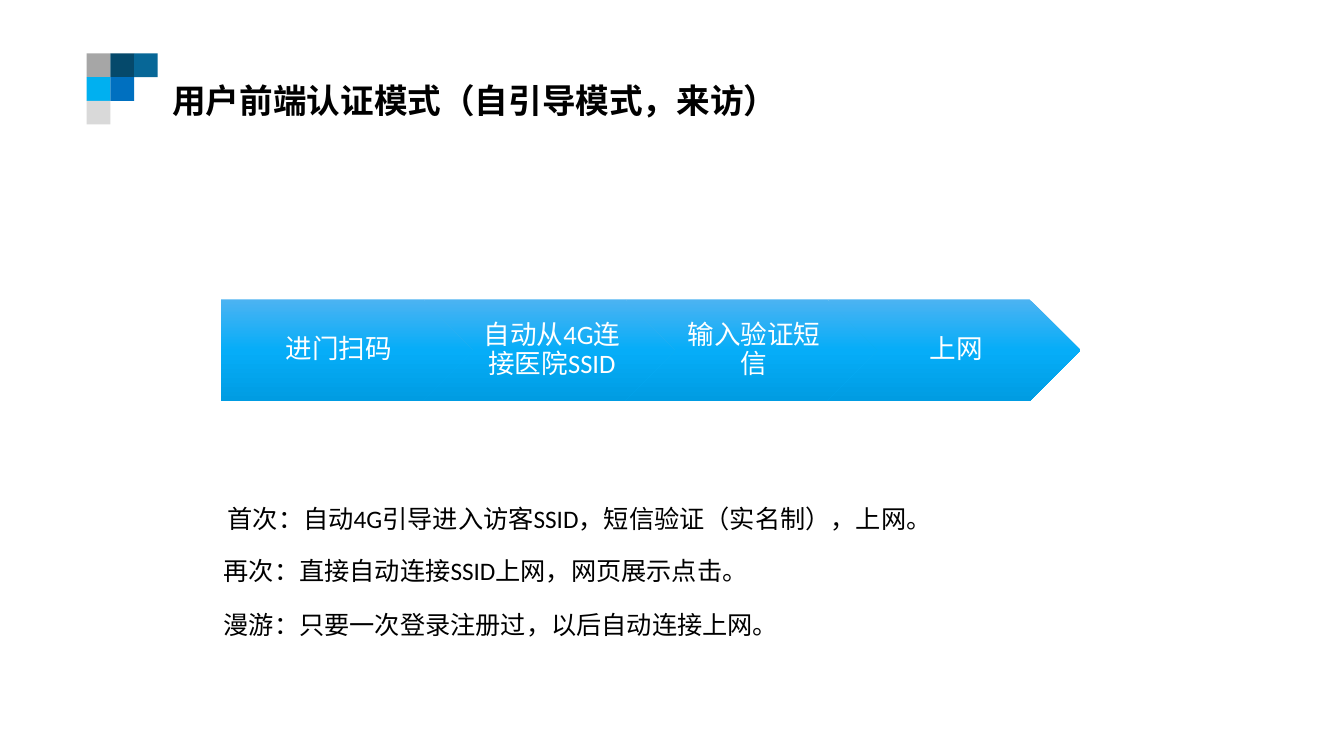
from copy import deepcopy
from dataclasses import dataclass

from pptx import Presentation
from pptx.dml.color import RGBColor
from pptx.enum.shapes import MSO_SHAPE as Shape
from pptx.enum.text import MSO_ANCHOR as Anchor, MSO_AUTO_SIZE as AutoSize, PP_ALIGN as Align
from pptx.oxml.ns import qn
from pptx.oxml.xmlchemy import OxmlElement
from pptx.util import Inches, Pt


@dataclass(frozen=True)
class Theme:
    latin: str = "Calibri"
    cjk: str = "Noto Sans CJK SC"
    title_size: float = 24
    step_size: float = 19
    note_size: float = 18
    ink: str = "000000"
    paper: str = "FFFFFF"
    arrow: tuple = ("4CB3F2", "06ADF8", "009CE2")


THEME = Theme()
WIDTH, HEIGHT = 13.33, 7.5

# Mosaic tiles: (column, row, colour)
TILE = 0.235
TILES = [
    (0, 0, "A6A6A6"), (1, 0, "05496B"), (2, 0, "076797"),
    (0, 1, "00B0F0"), (1, 1, "0070C0"),
    (0, 2, "D9D9D9"),
]

TITLE = "用户前端认证模式（自引导模式，来访）"
STEPS = ["进门扫码", "自动从4G连接医院SSID", "输入验证短信", "上网"]
STEP_WIDTH, STEP_HEIGHT = 2.51, 1.01
STEP_PITCH = STEP_WIDTH - STEP_HEIGHT / 2

# Notes: (left, top, width, text)
NOTES = [
    (2.16, 4.94, 7.25, "首次：自动4G引导进入访客SSID，短信验证（实名制），上网。"),
    (2.12, 5.46, 5.45, "再次：直接自动连接SSID上网，网页展示点击。"),
    (2.12, 6.00, 5.76, "漫游：只要一次登录注册过，以后自动连接上网。"),
]


def apply_format(target, values):
    for name, value in values.items():
        setattr(target, name, value)


def write_text(frame, text, size, color, latin=THEME.latin, bold=False,
               align=Align.LEFT, spacing=1.0):
    para = frame.paragraphs[0]
    apply_format(para, {"alignment": align, "line_spacing": spacing})
    span = para.add_run()
    span.text = text
    apply_format(span.font, {"size": Pt(size), "bold": bold, "name": latin})
    span.font.color.rgb = RGBColor.from_string(color)
    east_asian = OxmlElement("a:ea")
    east_asian.set("typeface", THEME.cjk)
    span.font.fill  # run properties already exist here
    span.font._element.find(qn("a:latin")).addnext(east_asian)


def add_plain_shape(page, kind, left, top, width, height):
    """Add a preset shape with neither outline nor shadow."""
    shape = page.shapes.add_shape(
        kind, Inches(left), Inches(top), Inches(width), Inches(height))
    shape.shadow.inherit = False
    shape.line.fill.background()
    return shape


def fill_gradient(shape, colors):
    """Fill from top to bottom with three evenly spaced colours."""
    shape.fill.gradient()
    shape.fill.gradient_angle = 270
    first = next(shape._element.spPr.iter(qn("a:gs")))
    first.addnext(deepcopy(first))
    for index, (stop, color) in enumerate(zip(shape.fill.gradient_stops, colors)):
        stop.position = index / (len(colors) - 1)
        stop.color.rgb = RGBColor.from_string(color)


def add_mosaic(page, left, top):
    for column, row, color in TILES:
        tile = add_plain_shape(
            page, Shape.RECTANGLE, left + column * TILE, top + row * TILE, TILE, TILE)
        tile.fill.solid()
        tile.fill.fore_color.rgb = RGBColor.from_string(color)


def set_title(page):
    title = page.shapes.title
    apply_format(title, {"left": Inches(1.61), "top": Inches(0.74),
                         "width": Inches(7.05), "height": Inches(0.5)})
    apply_format(title.text_frame, {"vertical_anchor": Anchor.TOP, "word_wrap": True,
                                    "auto_size": AutoSize.NONE})
    write_text(title.text_frame, TITLE, THEME.title_size, THEME.ink,
               latin=THEME.cjk, bold=True)


def add_process(page, left, top):
    for index, text in enumerate(STEPS):
        kind = Shape.CHEVRON if index else Shape.PENTAGON
        step = add_plain_shape(
            page, kind, left + index * STEP_PITCH, top, STEP_WIDTH, STEP_HEIGHT)
        fill_gradient(step, THEME.arrow)
        apply_format(step.text_frame, {
            "word_wrap": True, "vertical_anchor": Anchor.MIDDLE,
            "margin_left": Inches(0.08 if index else 0.11), "margin_right": Inches(0.03),
            "margin_top": Inches(0.06), "margin_bottom": Inches(0.06)})
        write_text(step.text_frame, text, THEME.step_size, THEME.paper,
                   align=Align.CENTER, spacing=0.9)


def add_note(page, left, top, width, text):
    box = page.shapes.add_textbox(Inches(left), Inches(top), Inches(width), Inches(0.4))
    apply_format(box.text_frame, {"word_wrap": False,
                                  "auto_size": AutoSize.SHAPE_TO_FIT_TEXT})
    write_text(box.text_frame, text, THEME.note_size, THEME.ink)


def main():
    deck = Presentation()
    apply_format(deck, {"slide_width": Inches(WIDTH), "slide_height": Inches(HEIGHT)})
    page = deck.slides.add_slide(deck.slide_layouts[5])
    add_mosaic(page, 0.86, 0.53)
    set_title(page)
    add_process(page, 2.19, 2.97)
    for note in NOTES:
        add_note(page, *note)
    deck.save("out.pptx")


if __name__ == "__main__":
    main()
